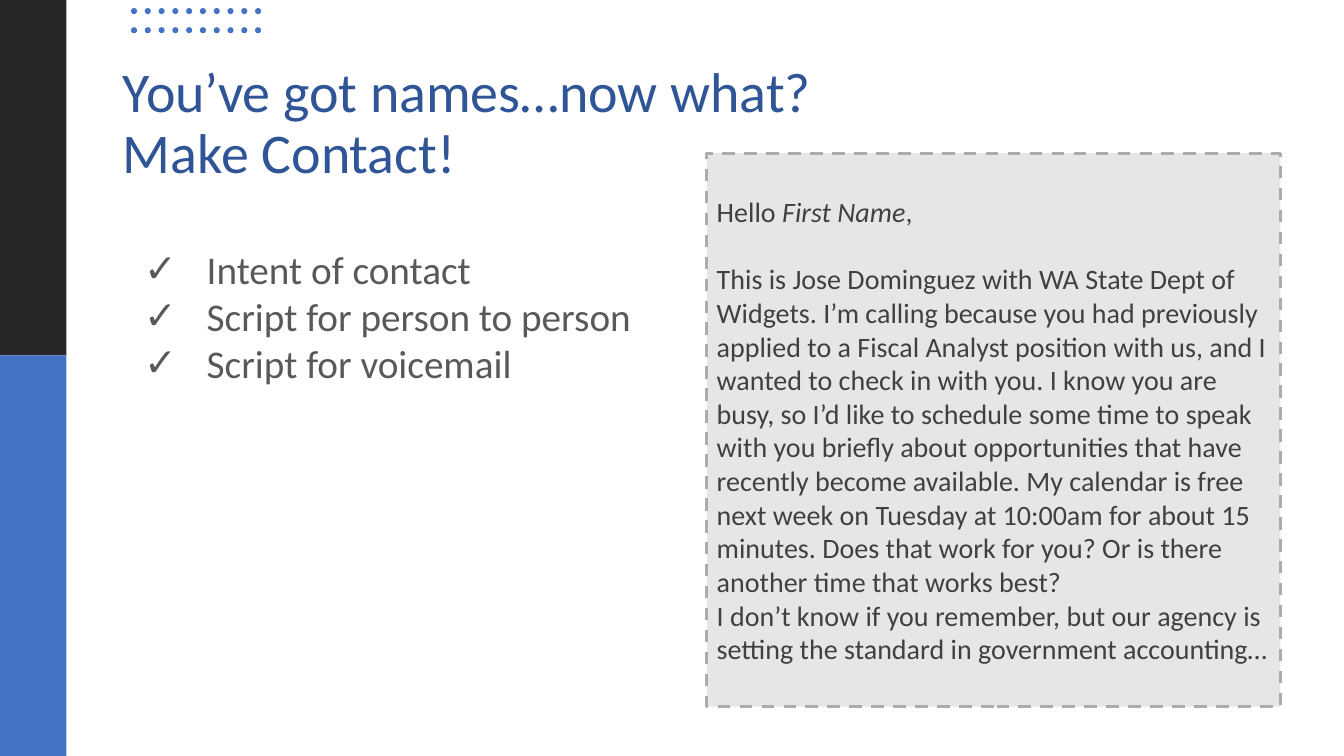
from lxml import etree
from pptx import Presentation
from pptx.dml.color import RGBColor
from pptx.enum.dml import MSO_LINE
from pptx.enum.shapes import MSO_SHAPE
from pptx.enum.text import MSO_ANCHOR, MSO_AUTO_SIZE, PP_ALIGN
from pptx.oxml.ns import qn
from pptx.util import Inches, Pt

RECT, OVAL = MSO_SHAPE.RECTANGLE, MSO_SHAPE.OVAL
LEFT, DASH = PP_ALIGN.LEFT, MSO_LINE.DASH
MIDDLE, BOTTOM, TOP = MSO_ANCHOR.MIDDLE, MSO_ANCHOR.BOTTOM, MSO_ANCHOR.TOP
FIXED = MSO_AUTO_SIZE.NONE

WIDTH, HEIGHT = Inches(13.33), Inches(7.5)
FONT = "Calibri"
COLORS = {"dark": "262626", "blue": "4472C4", "title": "2F5597", "list": "595959",
          "panel": "E7E6E6", "edge": "AFABAB", "script": "404040"}

TITLE = "You’ve got names…now what?\vMake Contact!"
POINTS = ["Intent of contact", "Script for person to person", "Script for voicemail"]
GREETING = [("Hello ", False), ("First Name", True), (",", False)]
SCRIPT = [
    "This is Jose Dominguez with WA State Dept of Widgets. I’m calling because you had "
    "previously applied to a Fiscal Analyst position with us, and I wanted to check in "
    "with you. I know you are busy, so I’d like to schedule some time to speak with you "
    "briefly about opportunities that have recently become available. My calendar is free "
    "next week on Tuesday at 10:00am for about 15 minutes. Does that work for you? Or is "
    "there another time that works best?",
    "I don’t know if you remember, but our agency is setting the standard in government "
    "accounting…",
]


def area(left, top, width, height):
    """Turn percentages of the slide into a box."""
    return (int(WIDTH * left / 100), int(HEIGHT * top / 100),
            int(WIDTH * width / 100), int(HEIGHT * height / 100))


def color(name):
    return RGBColor.from_string(COLORS[name])


def style(para, size, tint):
    para.alignment = LEFT
    for run in para.runs:
        run.font.name = FONT
        run.font.size = Pt(size)
        run.font.color.rgb = color(tint)


def block(shapes, kind, box, tint):
    shape = shapes.add_shape(kind, *box)
    shape.shadow.inherit = False
    shape.fill.solid()
    shape.fill.fore_color.rgb = color(tint)
    shape.line.fill.background()
    return shape


def place(holder, box, anchor):
    holder.left, holder.top, holder.width, holder.height = box
    frame = holder.text_frame
    frame.word_wrap = True
    frame.auto_size = FIXED
    frame.vertical_anchor = anchor
    return frame


def rail(slide, box, split):
    """Side bar in two colours, divided at a share of its height."""
    left, top, width, height = box
    cut = int(height * split)
    block(slide.shapes, RECT, (left, top, width, cut), "dark")
    block(slide.shapes, RECT, (left, top + cut, width, height - cut), "blue")


def dots(slide, box, cols, rows):
    """Grid of dots that fills the box."""
    left, top, width, height = box
    size = Inches(0.06)
    group = slide.shapes.add_group_shape()
    for row in range(rows):
        for col in range(cols):
            x = left + (width - size) * col // (cols - 1)
            y = top + (height - size) * row // (rows - 1)
            block(group.shapes, OVAL, (x, y, size, size), "blue")


def heading(slide, box):
    frame = place(slide.shapes.title, box, BOTTOM)
    frame.text = TITLE
    para = frame.paragraphs[0]
    para.line_spacing = 0.9
    style(para, 40, "title")


def checks(slide, box):
    """Check-marked list in the body placeholder."""
    frame = place(slide.placeholders[1], box, TOP)
    frame.text = "\n".join(POINTS)
    for para in frame.paragraphs:
        para.space_before = Pt(0)
        style(para, 28, "list")
        props = para._p.get_or_add_pPr()
        props.set("marL", str(Inches(0.62)))
        props.set("indent", str(-Inches(0.62)))
        etree.SubElement(props, qn("a:buFont"), typeface="Arial")
        etree.SubElement(props, qn("a:buChar"), char="✓")


def panel(slide, box):
    """Dashed panel with the call script."""
    shape = block(slide.shapes, RECT, box, "panel")
    shape.line.color.rgb = color("edge")
    shape.line.width = Pt(2.25)
    shape.line.dash_style = DASH
    frame = place(shape, box, MIDDLE)
    hello = frame.paragraphs[0]
    for text, slant in GREETING:
        run = hello.add_run()
        run.text = text
        run.font.italic = slant
    hello.space_after = Pt(24)
    for text in SCRIPT:
        frame.add_paragraph().text = text
    for para in frame.paragraphs:
        style(para, 20, "script")


def main():
    deck = Presentation()
    deck.slide_width, deck.slide_height = WIDTH, HEIGHT
    slide = deck.slides.add_slide(deck.slide_layouts[1])
    heading(slide, area(8.4, 6.53, 86.27, 18.67))
    rail(slide, area(0, 0, 4.95, 100), 0.47)
    dots(slide, area(9.75, 1.07, 9.68, 3.33), 10, 2)
    checks(slide, area(9.98, 31.73, 39.16, 20.13))
    panel(slide, area(52.59, 20.27, 42.69, 73.2))
    deck.save("out.pptx")


if __name__ == "__main__":
    main()
